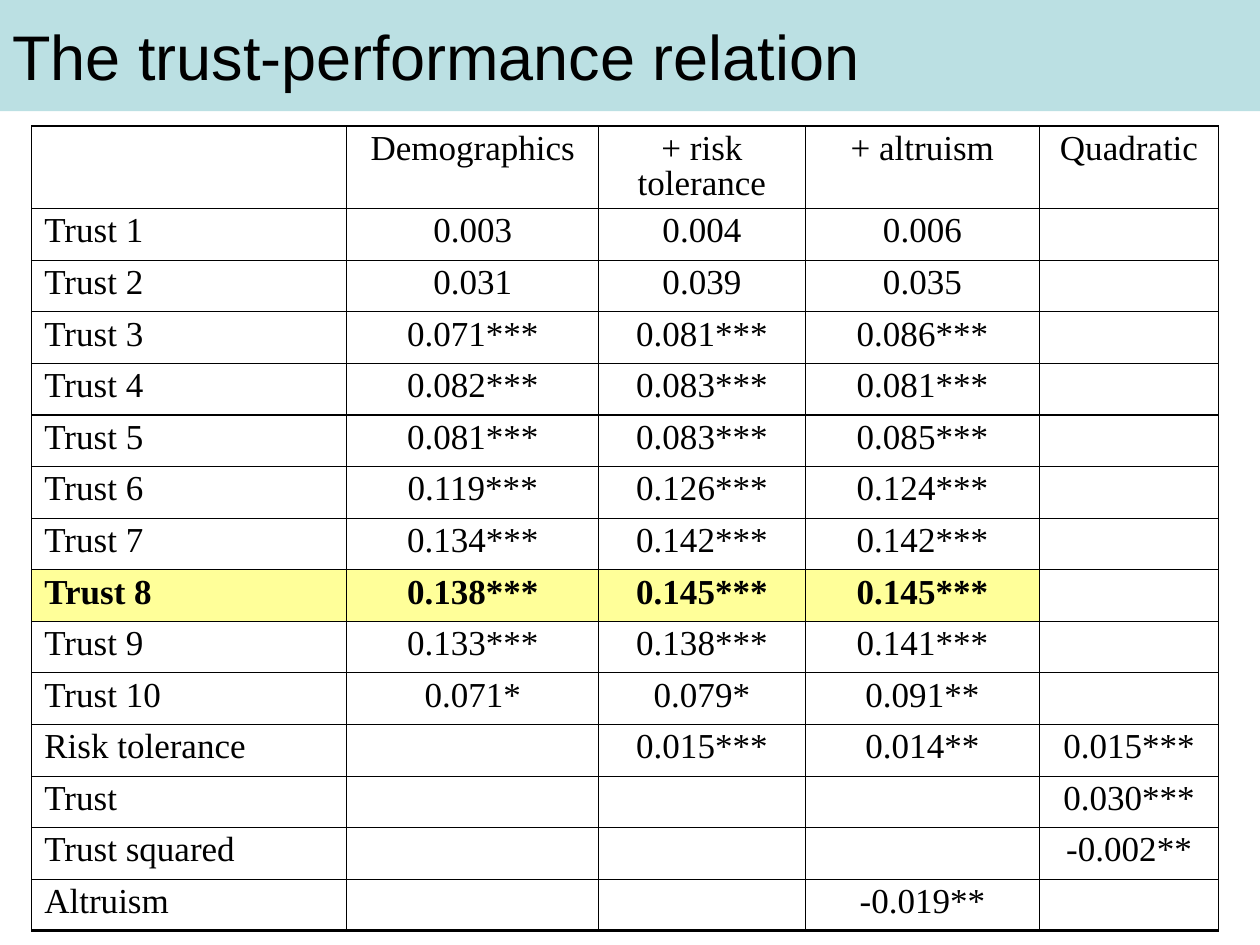
from typing import NamedTuple

from lxml.etree import SubElement
from pptx import Presentation
from pptx.dml.color import RGBColor
from pptx.enum.shapes import MSO_SHAPE as Shape
from pptx.enum.text import MSO_ANCHOR as Anchor, PP_ALIGN as Align
from pptx.oxml import parse_xml
from pptx.oxml.ns import nsdecls, qn
from pptx.util import Cm, Pt

BLACK = RGBColor(0x00, 0x00, 0x00)
BAND = RGBColor(0xBB, 0xE0, 0xE3)
HIGHLIGHT = RGBColor(0xFF, 0xFF, 0x99)

THIN, HEADER_RULE, BOTTOM_RULE = Pt(0.75), Pt(1), Pt(2)
HEADER_HEIGHT, ROW_HEIGHT = Cm(1.66), Cm(1.04)
COLUMN_WIDTHS = [Cm(6.35), Cm(5.08), Cm(4.16), Cm(4.73), Cm(3.6)]


class Row(NamedTuple):
    label: str
    demographics: str = ""
    risk: str = ""
    altruism: str = ""
    quadratic: str = ""


ROWS = [
    Row("", "Demographics", "+ risk tolerance", "+ altruism", "Quadratic"),
    Row("Trust 1", "0.003", "0.004", "0.006"),
    Row("Trust 2", "0.031", "0.039", "0.035"),
    Row("Trust 3", "0.071***", "0.081***", "0.086***"),
    Row("Trust 4", "0.082***", "0.083***", "0.081***"),
    Row("Trust 5", "0.081***", "0.083***", "0.085***"),
    Row("Trust 6", "0.119***", "0.126***", "0.124***"),
    Row("Trust 7", "0.134***", "0.142***", "0.142***"),
    Row("Trust 8", "0.138***", "0.145***", "0.145***"),
    Row("Trust 9", "0.133***", "0.138***", "0.141***"),
    Row("Trust 10", "0.071*", "0.079*", "0.091**"),
    Row("Risk tolerance", "", "0.015***", "0.014**", "0.015***"),
    Row("Trust", quadratic="0.030***"),
    Row("Trust squared", quadratic="-0.002**"),
    Row("Altruism", altruism="-0.019**"),
]
STRONGEST = "Trust 8"


def set_borders(cell, top: int, bottom: int) -> None:
    """Draw black lines round a cell; they precede the fill in its properties."""
    properties = cell._tc.get_or_add_tcPr()
    sides = {"lnL": THIN, "lnR": THIN, "lnT": top, "lnB": bottom}
    for index, (side, width) in enumerate(sides.items()):
        properties.insert(index, parse_xml(
            f'<a:{side} {nsdecls("a")} w="{int(width)}"><a:solidFill>'
            f'<a:srgbClr val="{BLACK}"/></a:solidFill></a:{side}>'))


def write_cell(cell, text: str, align: Align, bold: bool) -> None:
    cell.text_frame.text = text
    para = cell.text_frame.paragraphs[0]
    para.alignment = align
    para.line_spacing = 0.9
    # Space before as a share of the text size
    before = SubElement(para._p.get_or_add_pPr(), qn("a:spcBef"))
    SubElement(before, qn("a:spcPct")).set("val", "20000")
    font = para.runs[0].font
    font.name, font.size, font.bold = "Times New Roman", Pt(20), bold
    font.color.rgb = BLACK


def add_title(page, text: str) -> None:
    box = page.shapes.add_shape(Shape.RECTANGLE, 0, 0, Cm(25.4), Cm(2.24))
    box.shadow.inherit = False
    box.fill.solid()
    box.fill.fore_color.rgb = BAND
    box.line.fill.background()
    frame = box.text_frame
    frame.text = text
    frame.word_wrap = True
    frame.vertical_anchor = Anchor.MIDDLE
    para = frame.paragraphs[0]
    para.alignment = Align.LEFT
    font = para.runs[0].font
    font.name, font.size = "Arial", Pt(36)
    font.color.rgb = BLACK


def add_results(page, rows: list[Row]) -> None:
    last = len(rows) - 1
    table = page.shapes.add_table(
        len(rows), len(COLUMN_WIDTHS), Cm(0.64), Cm(2.54),
        sum(COLUMN_WIDTHS), HEADER_HEIGHT + last * ROW_HEIGHT).table
    table.first_row = table.horz_banding = False
    for column, width in zip(table.columns, COLUMN_WIDTHS):
        column.width = width

    for r, row in enumerate(rows):
        table.rows[r].height = ROW_HEIGHT if r else HEADER_HEIGHT
        strongest = row.label == STRONGEST
        for c, text in enumerate(row):
            cell = table.cell(r, c)
            if text:
                write_cell(cell, text, Align.CENTER if c else Align.LEFT, strongest)
            if strongest and text:
                cell.fill.solid()
                cell.fill.fore_color.rgb = HIGHLIGHT
            else:
                cell.fill.background()
            set_borders(
                cell,
                top=HEADER_RULE if r == 1 else THIN,
                bottom={0: HEADER_RULE, last: BOTTOM_RULE}.get(r, THIN))


def main() -> None:
    deck = Presentation()
    deck.slide_width, deck.slide_height = Cm(25.4), Cm(19.05)
    page = deck.slides.add_slide(deck.slide_layouts[6])
    add_title(page, "The trust-performance relation")
    add_results(page, ROWS)
    deck.save("out.pptx")


if __name__ == "__main__":
    main()
